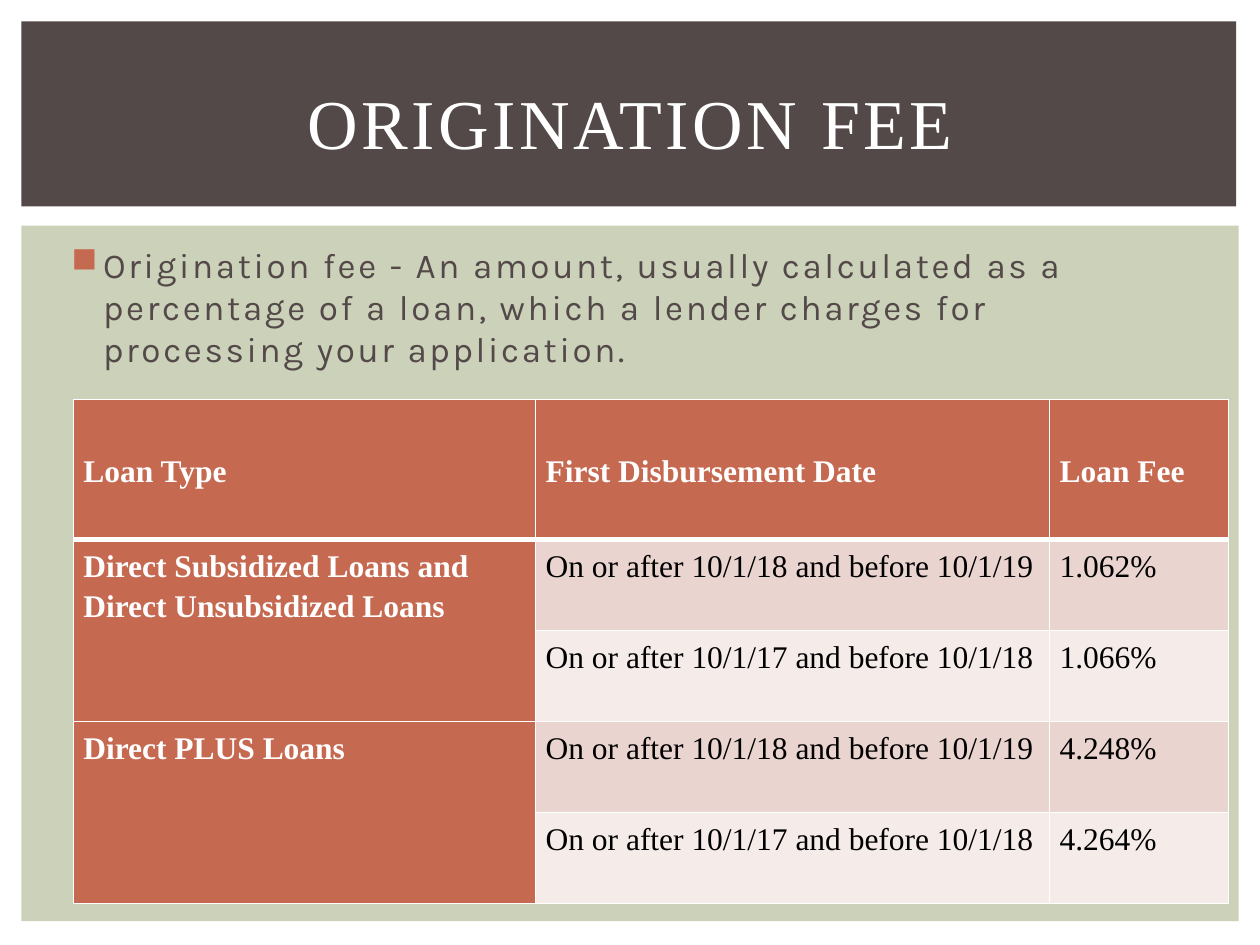
import lxml.etree
import pptx
import pptx.dml.color
import pptx.enum.shapes
import pptx.enum.text
import pptx.oxml.ns
import pptx.util

Cm = pptx.util.Cm
Pt = pptx.util.Pt
ANCHOR = pptx.enum.text.MSO_ANCHOR
ALIGN = pptx.enum.text.PP_ALIGN

COLORS = {
    "white": "FFFFFF",
    "black": "000000",
    "brown": "534949",
    "sage": "CCD1B9",
    "rust": "C66951",
    "pink": "EAD4D0",
    "pale": "F5EBE9",
}
SERIF = "Times New Roman"
HEADINGS = ["Loan Type", "First Disbursement Date", "Loan Fee"]
PERIODS = ["On or after 10/1/18 and before 10/1/19", "On or after 10/1/17 and before 10/1/18"]
LOANS = [
    ("Direct Subsidized Loans and Direct Unsubsidized Loans", ["1.062%", "1.066%"]),
    ("Direct PLUS Loans", ["4.248%", "4.264%"]),
]
COLUMN_WIDTHS = [9.32, 10.36, 3.61]
HEADER_HEIGHT = 2.82


def color(name):
    """Return the named colour."""
    return pptx.dml.color.RGBColor.from_string(COLORS[name])


def add_element(parent, tag, **attributes):
    """Append a drawing element to a parent."""
    element = lxml.etree.SubElement(parent, pptx.oxml.ns.qn(tag))
    for key, value in attributes.items():
        element.set(key, value)
    return element


def write_text(frame, text, size=18, font=SERIF, fill="white", bold=False,
               align=ALIGN.LEFT, tracking=0, line=1.0, before=0, after=0):
    """Write one formatted paragraph into a text frame and return it."""
    frame.word_wrap = True
    paragraph = frame.paragraphs[0]
    paragraph.alignment = align
    paragraph.line_spacing = line
    paragraph.space_before = Pt(before)
    paragraph.space_after = Pt(after)
    run = paragraph.add_run()
    run.text = text
    run.font.size = Pt(size)
    run.font.name = font
    run.font.bold = bold
    run.font.color.rgb = color(fill)
    if tracking:
        run.font._element.set("spc", str(int(tracking * 100)))
    return paragraph


def add_bullet(paragraph, indent, hanging):
    """Give a paragraph a square rust bullet."""
    properties = paragraph._p.get_or_add_pPr()
    properties.set("marL", str(Cm(indent)))
    properties.set("indent", str(-Cm(hanging)))
    bullet_color = add_element(properties, "a:buClr")
    add_element(bullet_color, "a:srgbClr", val=COLORS["rust"])
    add_element(properties, "a:buChar", char="■")


def add_panel(slide, left, top, width, height, fill):
    """Add a plain filled rectangle."""
    panel = slide.shapes.add_shape(
        pptx.enum.shapes.MSO_SHAPE.RECTANGLE, Cm(left), Cm(top), Cm(width), Cm(height))
    panel.shadow.inherit = False
    panel.fill.solid()
    panel.fill.fore_color.rgb = color(fill)
    panel.line.fill.background()


def add_title_band(slide, left, top, width, height):
    """Add the dark band and place the title on it."""
    add_panel(slide, left, top, width, height, "brown")
    title = slide.shapes.title
    title.left, title.top = Cm(left + 0.64), Cm(top + 0.56)
    title.width, title.height = Cm(width - 1.2), Cm(height - 0.81)
    title.text_frame.vertical_anchor = ANCHOR.MIDDLE
    write_text(title.text_frame, "ORIGINATION FEE", size=40, align=ALIGN.CENTER, tracking=2)
    title._element.getparent().append(title._element)


def style_cell(cell, fill, top=1, bottom=1):
    """Set the fill, margins and white borders of a cell."""
    cell.margin_left = cell.margin_right = Cm(0.2)
    cell.margin_top = cell.margin_bottom = Cm(0.1)
    properties = cell._tc.get_or_add_tcPr()
    for side, width in [("L", 1), ("R", 1), ("T", top), ("B", bottom)]:
        border = add_element(properties, "a:ln" + side, w=str(Pt(width)))
        add_element(add_element(border, "a:solidFill"), "a:srgbClr", val=COLORS["white"])
    cell.fill.solid()
    cell.fill.fore_color.rgb = color(fill)


def add_fee_table(slide, left, top, width, height):
    """Add the table of loan fees."""
    row_count = 1 + len(LOANS) * len(PERIODS)
    table = slide.shapes.add_table(
        row_count, len(HEADINGS), Cm(left), Cm(top), Cm(width), Cm(height)).table
    for column, column_width in zip(table.columns, COLUMN_WIDTHS):
        column.width = Cm(column_width)
    for index, row in enumerate(table.rows):
        body_height = (height - HEADER_HEIGHT) / (row_count - 1)
        row.height = Cm(body_height if index else HEADER_HEIGHT)
        for column_index, cell in enumerate(row.cells):
            band = "pink" if index % 2 else "pale"
            fill = band if index and column_index else "rust"
            style_cell(cell, fill, top=3 if index == 1 else 1, bottom=1 if index else 3)

    def fill_cell(row, column, text, **style):
        write_text(table.cell(row, column).text_frame, text, line=1.15, after=10, **style)

    for column, heading in enumerate(HEADINGS):
        table.cell(0, column).vertical_anchor = ANCHOR.MIDDLE
        fill_cell(0, column, heading, bold=True)
    for loan_index, (loan, fees) in enumerate(LOANS):
        first = 1 + loan_index * len(PERIODS)
        table.cell(first, 0).merge(table.cell(first + len(PERIODS) - 1, 0))
        fill_cell(first, 0, loan, bold=True)
        for row, (period, fee) in enumerate(zip(PERIODS, fees), first):
            fill_cell(row, 1, period, fill="black")
            fill_cell(row, 2, fee, fill="black")


def add_content(slide, left, top, width, height):
    """Add the sage panel with the definition and the fee table."""
    add_panel(slide, left, top, width, height, "sage")
    definition = slide.shapes.add_textbox(
        Cm(left + 0.64), Cm(top + 0.23), Cm(width - 1.2), Cm(3.2))
    paragraph = write_text(
        definition.text_frame,
        "Origination fee - An amount, usually calculated as a percentage of a loan, "
        "which a lender charges for processing your application.",
        size=20, font="Karla", fill="brown", tracking=1.5, before=4)
    add_bullet(paragraph, indent=0.76, hanging=0.64)
    add_fee_table(slide, left + 1.05, top + 3.5, sum(COLUMN_WIDTHS), 10.16)


def main():
    """Build and save the presentation."""
    presentation = pptx.Presentation()
    presentation.slide_width, presentation.slide_height = Cm(25.4), Cm(19.05)
    slide = presentation.slides.add_slide(presentation.slide_layouts[5])
    add_title_band(slide, 0.43, 0.43, 24.49, 3.73)
    add_content(slide, 0.43, 4.55, 24.54, 14.02)
    presentation.save("out.pptx")


if __name__ == "__main__":
    main()
